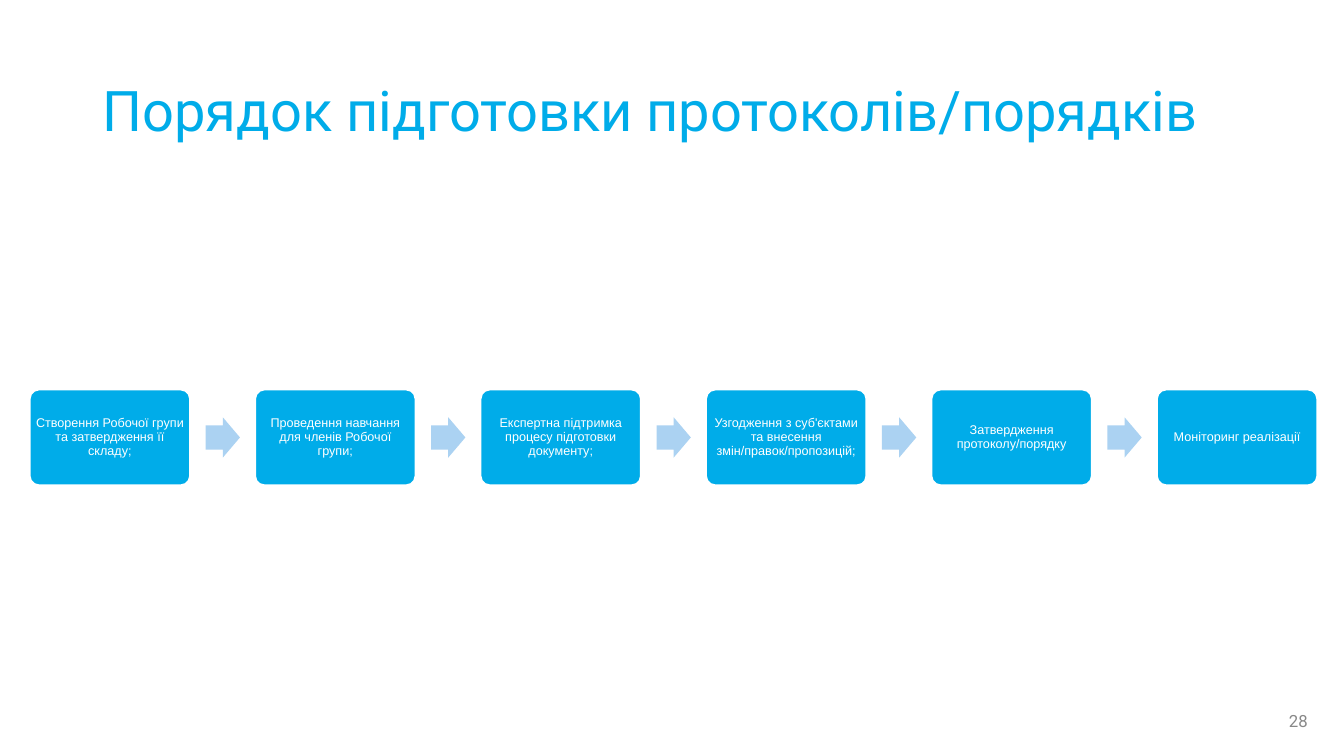
"""Build a slide with a six-step process for preparing protocols."""
from dataclasses import dataclass

from pptx import Presentation
from pptx import util as u
from pptx.dml.color import RGBColor
from pptx.enum import shapes, text


@dataclass(frozen=True)
class Theme:
    blue: str = "00ACE9"
    pale: str = "ABD2F2"
    white: str = "FFFFFF"
    gray: str = "888888"
    head: str = "Roboto"
    body: str = "Arial"
    title: int = 40
    step: int = 9
    page: int = 12


class Deck:
    def __init__(self, theme, slide):
        self.theme = theme
        self.slide = slide

    def fit(self, shape, words, font, size, color, align, pads, space=1.0):
        frame = shape.text_frame
        frame.word_wrap = True
        frame.vertical_anchor = text.MSO_ANCHOR.MIDDLE
        frame.margin_left = frame.margin_right = u.Inches(pads[0])
        frame.margin_top = frame.margin_bottom = u.Inches(pads[1])
        para = frame.paragraphs[0]
        para.text = words
        para.alignment = align
        para.line_spacing = space
        para.font.name = font
        para.font.size = u.Pt(size)
        para.font.color.rgb = RGBColor.from_string(color)

    def label(self, words, box, size, color, align, space=1.0):
        shape = self.slide.shapes.add_textbox(*map(u.Inches, box))
        self.fit(shape, words, self.theme.head, size, color, align,
                 (0.1, 0.05), space)

    def block(self, kind, box, fill, bends):
        shape = self.slide.shapes.add_shape(kind, *map(u.Inches, box))
        shape.shadow.inherit = False
        shape.fill.solid()
        shape.fill.fore_color.rgb = RGBColor.from_string(fill)
        shape.line.fill.background()
        for i, bend in enumerate(bends):
            shape.adjustments[i] = bend
        return shape

    def step(self, words, left):
        shape = self.block(shapes.MSO_SHAPE.ROUNDED_RECTANGLE,
                           (left, 3.86, 1.6, 0.96), self.theme.blue, [0.1])
        shape.line.color.rgb = RGBColor.from_string(self.theme.white)
        shape.line.width = u.Pt(2)
        self.fit(shape, words, self.theme.body, self.theme.step,
                 self.theme.white, text.PP_ALIGN.CENTER, (0.03, 0.04), 0.9)

    def arrow(self, left):
        self.block(shapes.MSO_SHAPE.RIGHT_ARROW, (left, 4.14, 0.34, 0.4),
                   self.theme.pale, [0.6, 0.5])


STEPS = [
    "Створення Робочої групи та затвердження її складу;",
    "Проведення навчання для членів Робочої групи;",
    "Експертна підтримка процесу підготовки документу;",
    "Узгодження з суб'єктами та внесення змін/правок/пропозицій;",
    "Затвердження протоколу/порядку",
    "Моніторинг реалізації",
]


def main():
    show = Presentation()
    show.slide_width = u.Inches(13.33)
    show.slide_height = u.Inches(7.5)
    theme = Theme()
    deck = Deck(theme, show.slides.add_slide(show.slide_layouts[6]))
    deck.label("Порядок підготовки протоколів/порядків",
               (0.92, 0.4, 11.5, 1.45), theme.title, theme.blue,
               text.PP_ALIGN.LEFT, 0.9)
    first, last = 0.29, 11.47
    pitch = (last - first) / (len(STEPS) - 1)
    for i, words in enumerate(STEPS):
        left = first + i * pitch
        deck.step(words, left)
        if i < len(STEPS) - 1:
            deck.arrow(left + 1.75)
    deck.label("28", (10.07, 6.95, 3, 0.4), theme.page, theme.gray,
               text.PP_ALIGN.RIGHT)
    show.save("out.pptx")


if __name__ == "__main__":
    main()
